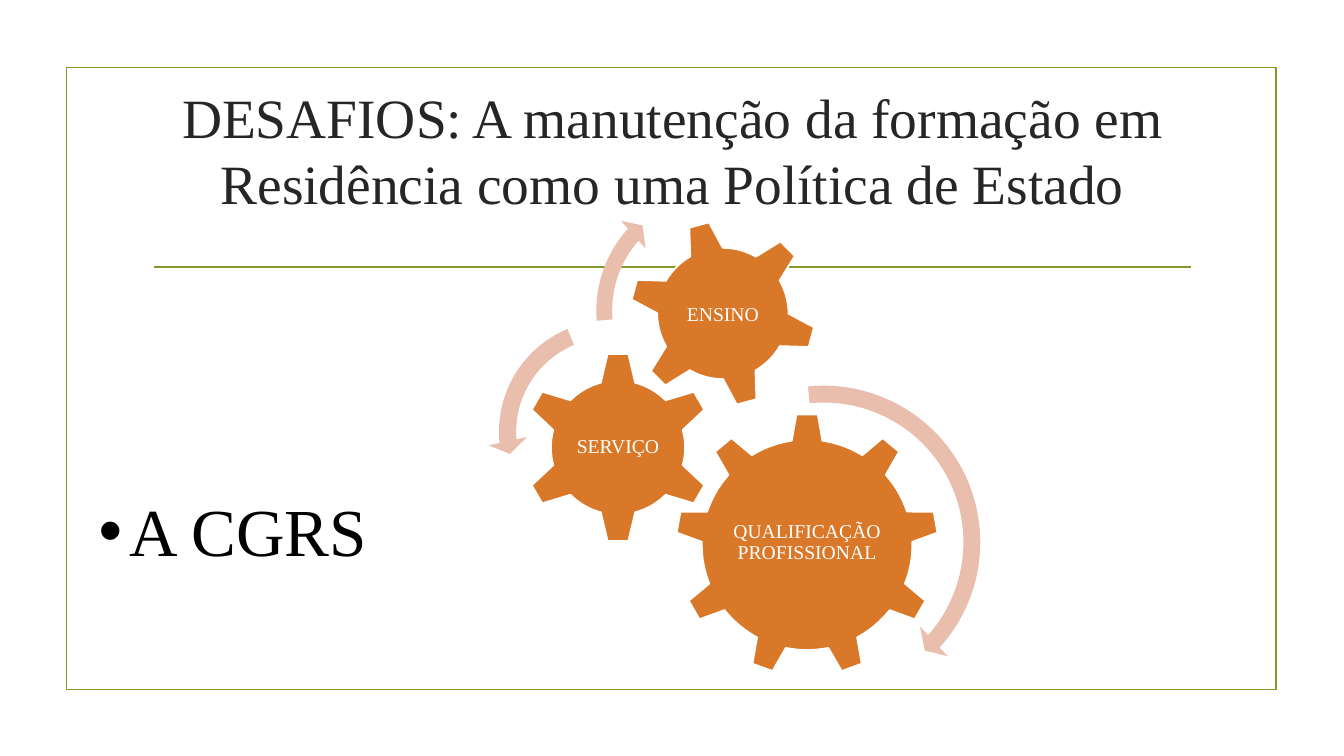
from lxml import etree
from pptx import Presentation
from pptx.dml.color import RGBColor
from pptx.enum.shapes import MSO_CONNECTOR as Link, MSO_SHAPE as Kind
from pptx.enum.text import MSO_ANCHOR as Anchor, PP_ALIGN as Align
from pptx.oxml.ns import qn
from pptx.util import Inches, Pt

FONT = "Times New Roman"
GREEN, ORANGE, PINK = "83992A", "D97828", "E9BEAD"
WHITE, BLACK, DARK = "FFFFFF", "000000", "262626"

TITLE = "DESAFIOS: A manutenção da formação em Residência como uma Política de Estado"
ITEM = "A CGRS"

# kind, left, top, size, rotation, label, label width, label height, label rise, line spacing
GEARS = [
    (Kind.GEAR_9, 6.7, 4.1, 2.61, 0, "QUALIFICAÇÃO PROFISSIONAL", 1.56, 1.34, 0.02, 0.9),
    (Kind.GEAR_6, 5.18, 3.49, 1.9, 0, "SERVIÇO", 0.94, 0.94, 0, 0.9),
    (Kind.GEAR_6, 6.24, 2.18, 1.86, 345, "ENSINO", 1.04, 1.04, 0, 1),
]
# kind, left, top, size, adjustments
ARROWS = [
    (Kind.CIRCULAR_ARROW, 6.5, 3.71, 3.34, (0.05, 2.99, 25.2, 158.54, 0.06)),
    (Kind.LEFT_CIRCULAR_ARROW, 4.84, 3.07, 2.43, (0.07, 4.3, 104.89, 148.38, 0.08)),
    (Kind.CIRCULAR_ARROW, 5.81, 1.77, 2.62, (0.06, 3.94, 133.14, 105.08, 0.07)),
]

deck = Presentation()
deck.slide_width, deck.slide_height = Inches(13.33), Inches(7.5)
slide = deck.slides.add_slide(deck.slide_layouts[6])


def color(code):
    return RGBColor.from_string(code)


def shape(kind, x, y, w, h, fill=None, edge=None):
    item = slide.shapes.add_shape(kind, *map(Inches, (x, y, w, h)))
    item.shadow.inherit = False
    if fill:
        item.fill.solid()
        item.fill.fore_color.rgb = color(fill)
    else:
        item.fill.background()
    if edge:
        item.line.color.rgb = color(edge)
        item.line.width = Pt(1.25)
    else:
        item.line.fill.background()
    return item


def write(text, x, y, w, h, size, ink, align=Align.CENTER, anchor=Anchor.MIDDLE,
          pad=(0.02, 0.02), space=1, hang=0):
    """Add a text box; pad is (side, top and bottom), hang adds a bullet."""
    frame = slide.shapes.add_textbox(*map(Inches, (x, y, w, h))).text_frame
    frame.word_wrap = True
    frame.vertical_anchor = anchor
    frame.margin_left = frame.margin_right = Inches(pad[0])
    frame.margin_top = frame.margin_bottom = Inches(pad[1])
    para = frame.paragraphs[0]
    para.alignment, para.line_spacing = align, space
    if hang:
        props = para._p.get_or_add_pPr()
        props.set("marL", str(Inches(hang)))
        props.set("indent", str(-Inches(hang)))
        etree.SubElement(props, qn("a:buFont")).set("typeface", "Arial")
        etree.SubElement(props, qn("a:buChar")).set("char", "•")
    run = para.add_run()
    run.text = text
    run.font.name, run.font.size = FONT, Pt(size)
    run.font.color.rgb = color(ink)


shape(Kind.RECTANGLE, 0.66, 0.67, 12, 6.17, edge=GREEN)

rule = slide.shapes.add_connector(Link.STRAIGHT, *map(Inches, (1.53, 2.65, 11.81, 2.65)))
rule.line.color.rgb = color(GREEN)
rule.line.width = Pt(1.25)
etree.SubElement(rule._element.spPr, qn("a:effectLst"))

write(TITLE, 1.42, 0.83, 10.5, 1.3, 39.6, DARK, pad=(0.1, 0))

for kind, x, y, size, turn, label, w, h, rise, space in GEARS:
    shape(kind, x, y, size, size, ORANGE, WHITE).rotation = turn
    write(label, x + (size - w) / 2, y + (size - h) / 2 - rise, w, h, 14, WHITE, space=space)

for kind, x, y, size, bends in ARROWS:
    arrow = shape(kind, x, y, size, size, PINK)
    for i, bend in enumerate(bends):
        arrow.adjustments[i] = bend

write(ITEM, 0.88, 4.81, 4.06, 0.91, 48, BLACK, align=Align.LEFT, anchor=Anchor.TOP,
      pad=(0.1, 0.05), hang=0.31)

deck.save("out.pptx")
